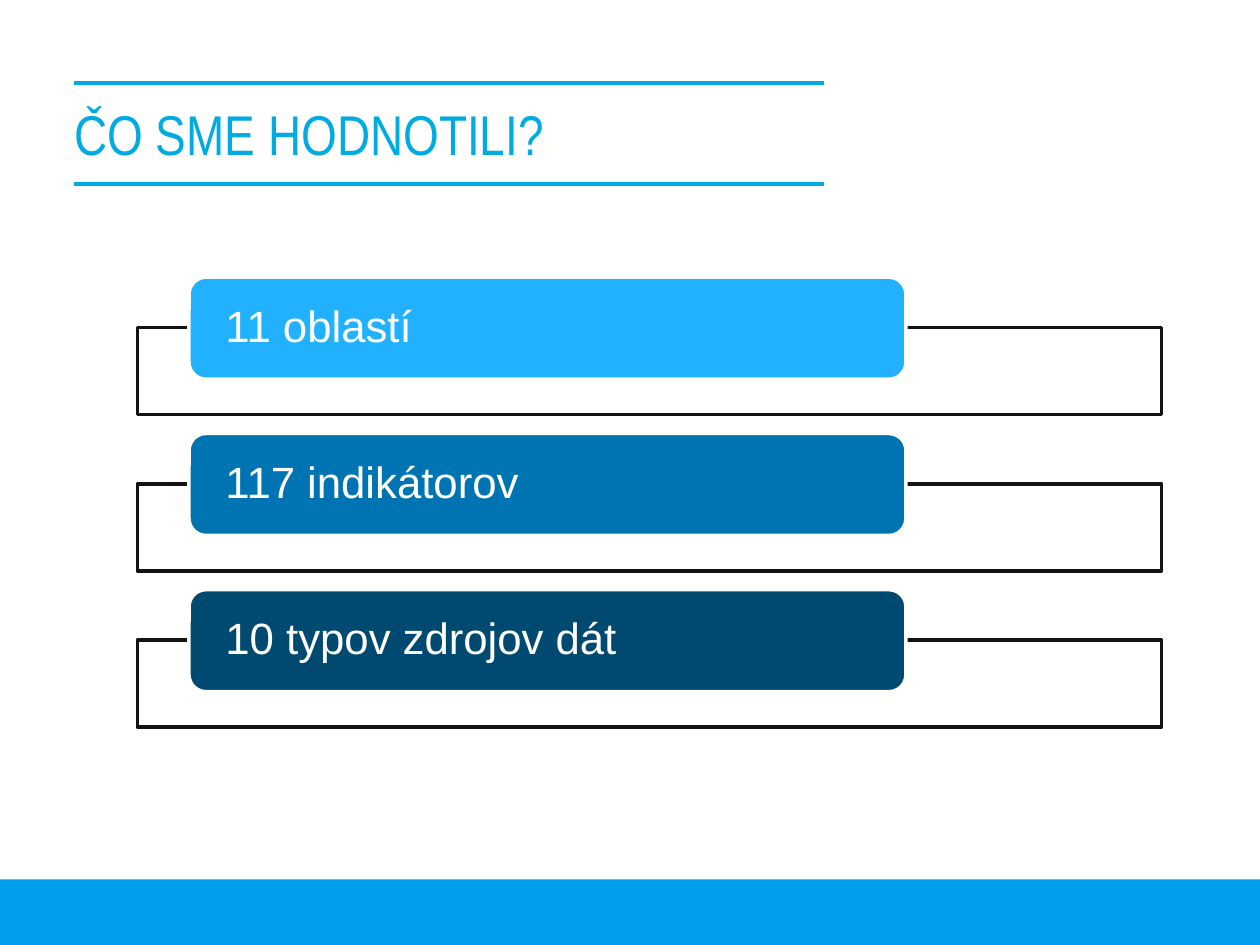
from typing import NamedTuple

from lxml import etree
from pptx import Presentation
from pptx.dml.color import RGBColor
from pptx.enum import shapes, text
from pptx.oxml import ns
from pptx.util import Inches, Pt

PAPER = RGBColor(0xFF, 0xFF, 0xFE)
INK = RGBColor(0x14, 0x13, 0x13)
CYAN = RGBColor(0x00, 0xAB, 0xE2)
BAND = RGBColor(0x00, 0x9F, 0xEE)
SKY = RGBColor(0x22, 0xB1, 0xFF)
BLUE = RGBColor(0x00, 0x74, 0xB2)
NAVY = RGBColor(0x00, 0x49, 0x70)

RECT = shapes.MSO_SHAPE.RECTANGLE
ROUND = shapes.MSO_SHAPE.ROUNDED_RECTANGLE
TOP, STEP = 2.2, 1.24


class Item(NamedTuple):
    label: str
    color: RGBColor


class Area(NamedTuple):
    left: float
    top: float
    width: float
    height: float


ITEMS = [
    Item("11 oblastí", SKY),
    Item("117 indikátorov", BLUE),
    Item("10 typov zdrojov dát", NAVY),
]


def add_box(slide, kind, area: Area, fill: RGBColor, line: RGBColor | None = None):
    box = slide.shapes.add_shape(kind, *map(Inches, area))
    box.shadow.inherit = False
    box.fill.solid()
    box.fill.fore_color.rgb = fill
    if line is None:
        box.line.fill.background()
    else:
        box.line.color.rgb = line
        box.line.width = Pt(2)
    return box


def add_rule(slide, y: float) -> None:
    """Draw one of the lines that frame the title."""
    rule = slide.shapes.add_connector(
        shapes.MSO_CONNECTOR.STRAIGHT,
        Inches(0.59), Inches(y), Inches(6.54), Inches(y))
    rule.line.color.rgb = CYAN
    rule.line.width = Pt(2)
    etree.SubElement(rule._element.spPr, ns.qn("a:effectLst"))


def set_text(shape, label: str, font: str, size: int, color: RGBColor, inset: float):
    frame = shape.text_frame
    frame.word_wrap = True
    frame.vertical_anchor = text.MSO_ANCHOR.MIDDLE
    frame.margin_left = frame.margin_right = Inches(inset)
    frame.margin_top = frame.margin_bottom = 0
    frame.text = label
    para = frame.paragraphs[0]
    para.alignment = text.PP_ALIGN.LEFT
    run = para.runs[0].font
    run.name, run.size = font, Pt(size)
    run.color.rgb = color
    return para


def add_item(slide, item: Item, top: float) -> None:
    add_box(slide, RECT, Area(1.09, top + 0.4, 8.13, 0.69), PAPER, INK)
    pill = add_box(slide, ROUND, Area(1.5, top, 5.69, 0.81), item.color, PAPER)
    para = set_text(pill, item.label, "Arial", 25, PAPER, 0.25)
    para.line_spacing = 0.9


def main() -> None:
    deck = Presentation()
    deck.slide_width, deck.slide_height = Inches(10), Inches(7.5)
    slide = deck.slides.add_slide(deck.slide_layouts[6])
    slide.background.fill.solid()
    slide.background.fill.fore_color.rgb = PAPER

    add_box(slide, RECT, Area(0, 6.98, 10, 0.52), BAND)
    for y in (0.66, 1.46):
        add_rule(slide, y)
    title = slide.shapes.add_textbox(*map(Inches, Area(0.59, 0.62, 6.93, 0.87)))
    set_text(title, "ČO SME HODNOTILI?", "Arial Narrow", 32, CYAN, 0)
    for row, item in enumerate(ITEMS):
        add_item(slide, item, TOP + row * STEP)
    deck.save("out.pptx")


if __name__ == "__main__":
    main()
